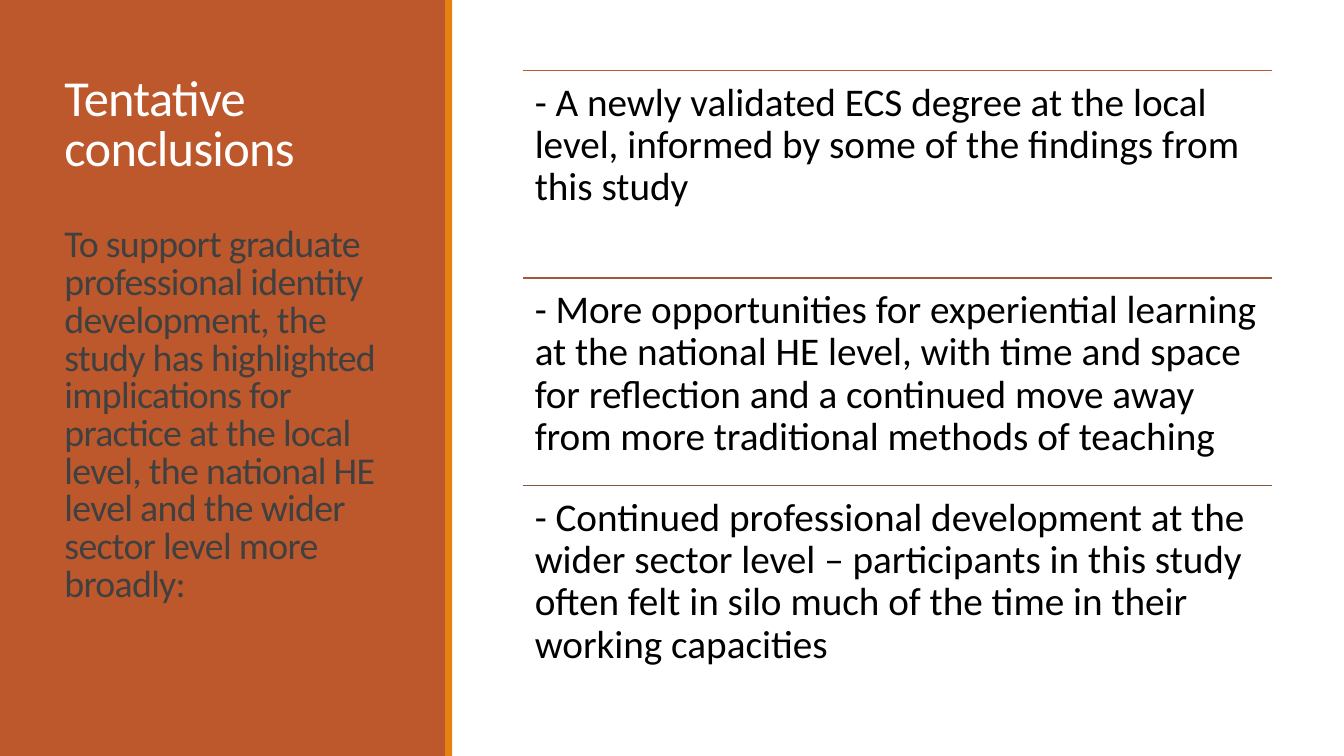
from dataclasses import dataclass

from lxml.etree import SubElement
from pptx import Presentation
from pptx.dml.color import RGBColor
from pptx.enum.shapes import MSO_CONNECTOR, MSO_SHAPE
from pptx.enum.text import MSO_ANCHOR
from pptx.oxml.ns import qn
from pptx.util import Pt


@dataclass(frozen=True)
class Theme:
    font: str = "Calibri"
    rust: str = "BD582C"
    orange: str = "E48312"
    white: str = "FFFFFF"
    grey: str = "404040"
    black: str = "000000"
    dividers: tuple = ("BD582C", "A05837", "865640")
    title_size: float = 36
    subtitle_size: float = 27
    body_size: float = 28


class SlideBuilder:
    def __init__(self, page, theme):
        self.page = page
        self.theme = theme

    def panel(self, left, top, width, height, color):
        shape = self.page.shapes.add_shape(
            MSO_SHAPE.RECTANGLE, Pt(left), Pt(top), Pt(width), Pt(height))
        shape.shadow.inherit = False
        shape.fill.solid()
        shape.fill.fore_color.rgb = RGBColor.from_string(color)
        shape.line.fill.background()

    def divider(self, left, top, width, color):
        line = self.page.shapes.add_connector(
            MSO_CONNECTOR.STRAIGHT, Pt(left), Pt(top), Pt(left + width), Pt(top))
        line.line.color.rgb = RGBColor.from_string(color)
        line.line.width = Pt(1.25)
        SubElement(line._element.spPr, qn("a:effectLst"))

    def text_box(self, left, top, width, height, inset_x, inset_y):
        frame = self.page.shapes.add_textbox(
            Pt(left), Pt(top), Pt(width), Pt(height)).text_frame
        frame.word_wrap = True
        frame.vertical_anchor = MSO_ANCHOR.TOP
        frame.margin_left = frame.margin_right = Pt(inset_x)
        frame.margin_top = frame.margin_bottom = Pt(inset_y)
        return frame

    def style(self, paragraph, size, color, line_spacing, tracking=0):
        paragraph.line_spacing = line_spacing
        for span in paragraph.runs:
            span.font.name = self.theme.font
            span.font.size = Pt(size)
            span.font.color.rgb = RGBColor.from_string(color)
            if tracking:
                span._r.get_or_add_rPr().set("spc", str(round(tracking * 100)))


CONCLUSIONS = (
    "- A newly validated ECS degree at the local level, informed by some of "
    "the findings from this study",
    "- More opportunities for experiential learning at the national HE level, "
    "with time and space for reflection and a continued move away from more "
    "traditional methods of teaching",
    "- Continued professional development at the wider sector level – "
    "participants in this study often felt in silo much of the time in their "
    "working capacities",
)
TITLE = "Tentative conclusions"
SUBTITLE = (
    "To support graduate professional identity development, the study has "
    "highlighted implications for practice at the local level, the national HE "
    "level and the wider sector level more broadly:"
)


def main():
    deck = Presentation()
    deck.slide_width, deck.slide_height = Pt(960), Pt(540)
    page = deck.slides.add_slide(deck.slide_layouts[6])
    theme = Theme()
    builder = SlideBuilder(page, theme)

    # Left panel with its accent stripe
    builder.panel(0, 0, 319, 540, theme.rust)
    builder.panel(318, 0, 5, 540, theme.orange)

    # Title and introduction
    frame = builder.text_box(39, 51, 242.6, 440, 7.2, 3.6)
    frame.text = f"{TITLE}\n{SUBTITLE}"
    title, subtitle = frame.paragraphs
    builder.style(title, theme.title_size, theme.white, 0.83, -0.5)
    builder.style(subtitle, theme.subtitle_size, theme.grey, 0.83, -0.5)
    subtitle.space_before = Pt(36.5)

    # Conclusions, each under a divider
    left, first_top, width, row_height = 373.6, 50.4, 535, 148.2
    for row, (text, color) in enumerate(zip(CONCLUSIONS, theme.dividers)):
        top = first_top + row * row_height
        builder.divider(left, top, width, color)
        frame = builder.text_box(left, top, width, row_height, 8.4, 8.4)
        frame.text = text
        builder.style(frame.paragraphs[0], theme.body_size, theme.black, 0.9)

    deck.save("out.pptx")


if __name__ == "__main__":
    main()
